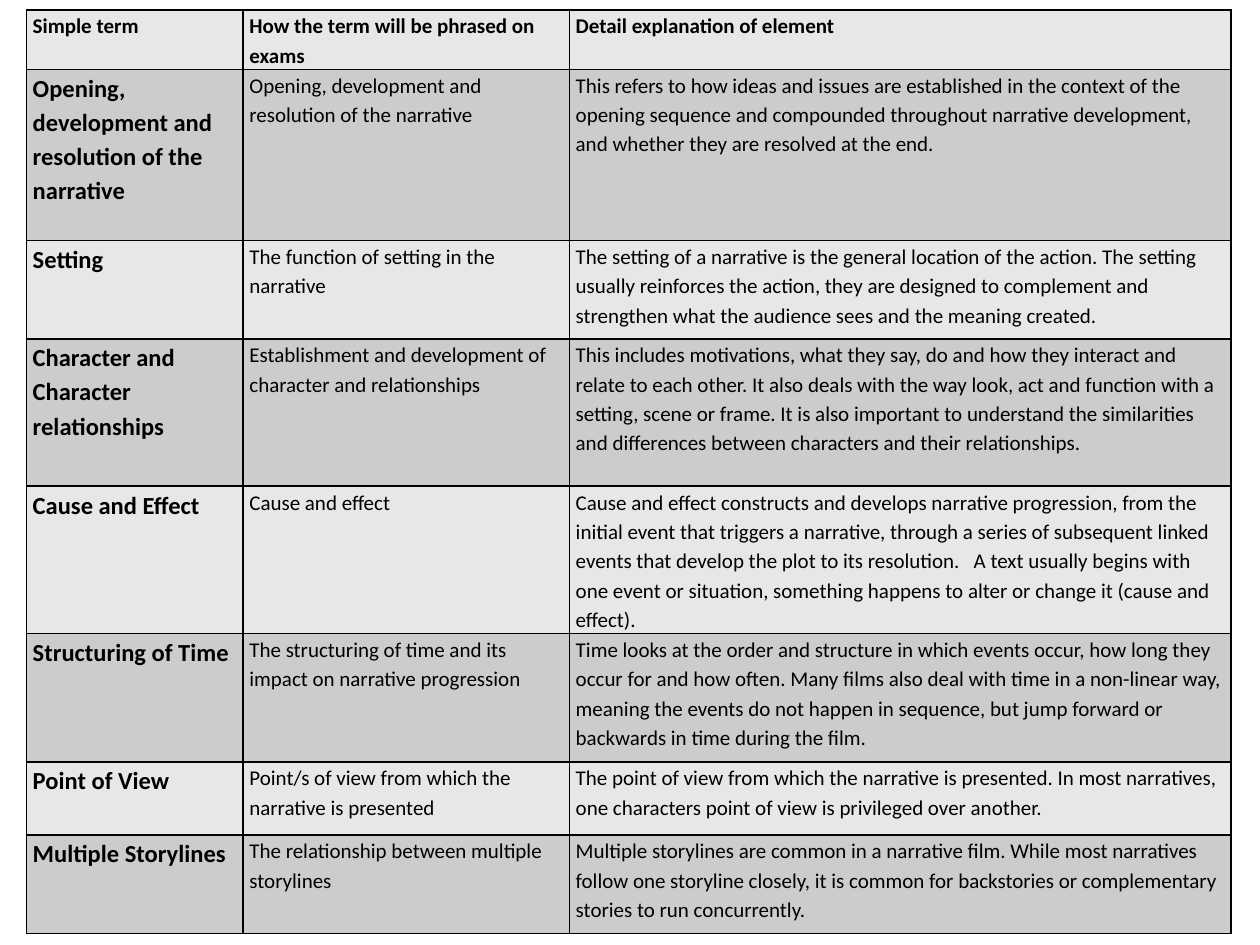
"""Build a one-slide table of the narrative elements used in film exams."""
from typing import NamedTuple

from lxml.etree import SubElement
from pptx import Presentation
from pptx.dml.color import RGBColor
from pptx.oxml.ns import qn
from pptx.util import Inches, Pt

FONT = "Calibri"
BLACK = RGBColor(0x00, 0x00, 0x00)
LIGHT_GREY = RGBColor(0xE7, 0xE7, 0xE7)
DARK_GREY = RGBColor(0xCC, 0xCC, 0xCC)
COLUMN_WIDTHS = (1.72, 2.59, 5.25)


class Element(NamedTuple):
    """One table row: its height in inches and its three texts."""

    height: float
    term: str
    exam_phrase: str
    explanation: str


ELEMENTS = (
    Element(0.47, "Simple term", "How the term will be phrased on exams",
            "Detail explanation of element"),
    Element(1.36, "Opening, development and resolution of the narrative",
            "Opening, development and resolution of the narrative",
            "This refers to how ideas and issues are established in the context of the "
            "opening sequence and compounded throughout narrative development, and "
            "whether they are resolved at the end."),
    Element(0.78, "Setting", "The function of setting in the narrative",
            "The setting of a narrative is the general location of the action. The "
            "setting usually reinforces the action, they are designed to complement and "
            "strengthen what the audience sees and the meaning created."),
    Element(1.17, "Character and Character relationships",
            "Establishment and development of character and relationships",
            "This includes motivations, what they say, do and how they interact and "
            "relate to each other. It also deals with the way look, act and function "
            "with a setting, scene or frame. It is also important to understand the "
            "similarities and differences between characters and their relationships."),
    Element(1.17, "Cause and Effect", "Cause and effect",
            "Cause and effect constructs and develops narrative progression, from the "
            "initial event that triggers a narrative, through a series of subsequent "
            "linked events that develop the plot to its resolution.   A text usually "
            "begins with one event or situation, something happens to alter or change "
            "it (cause and effect)."),
    Element(1.02, "Structuring of Time",
            "The structuring of time and its impact on narrative progression",
            "Time looks at the order and structure in which events occur, how long they "
            "occur for and how often. Many films also deal with time in a non-linear "
            "way, meaning the events do not happen in sequence, but jump forward or "
            "backwards in time during the film."),
    Element(0.58, "Point of View", "Point/s of view from which the narrative is presented",
            "The point of view from which the narrative is presented. In most "
            "narratives, one characters point of view is privileged over another."),
    Element(0.78, "Multiple Storylines", "The relationship between multiple storylines",
            "Multiple storylines are common in a narrative film. While most narratives "
            "follow one storyline closely, it is common for backstories or "
            "complementary stories to run concurrently."),
)


def add_borders(cell) -> None:
    """Draw a thin black line on all four sides of a cell."""
    properties = cell._tc.get_or_add_tcPr()
    for side in ("a:lnL", "a:lnR", "a:lnT", "a:lnB"):
        line = SubElement(properties, qn(side), w=str(Pt(1)))
        fill = SubElement(line, qn("a:solidFill"))
        SubElement(fill, qn("a:srgbClr"), val=str(BLACK))


def format_cell(cell, text: str, size: int, bold: bool, color: RGBColor) -> None:
    """Write and style one cell."""
    add_borders(cell)
    cell.fill.solid()
    cell.fill.fore_color.rgb = color
    cell.margin_left = cell.margin_right = Inches(0.05)
    cell.margin_top = cell.margin_bottom = 0
    cell.text_frame.text = text
    paragraph = cell.text_frame.paragraphs[0]
    paragraph.line_spacing = 1.15
    font = paragraph.runs[0].font
    font.name = FONT
    font.size = Pt(size)
    font.bold = bold
    font.color.rgb = BLACK


def add_element_table(slide, elements: tuple[Element, ...]) -> None:
    """Add the table with alternating row colours."""
    total_height = sum(element.height for element in elements)
    table = slide.shapes.add_table(
        len(elements), len(COLUMN_WIDTHS), Inches(0.21), Inches(0.08),
        Inches(sum(COLUMN_WIDTHS)), Inches(total_height)).table
    for column, width in zip(table.columns, COLUMN_WIDTHS):
        column.width = Inches(width)
    for row_index, (row, element) in enumerate(zip(table.rows, elements)):
        row.height = Inches(element.height)
        is_header = row_index == 0
        color = DARK_GREY if row_index % 2 else LIGHT_GREY
        for column_index, (cell, text) in enumerate(zip(row.cells, element[1:])):
            is_term = column_index == 0
            size = 14 if is_term and not is_header else 12
            format_cell(cell, text, size, is_header or is_term, color)


def main() -> None:
    """Create and save the presentation."""
    presentation = Presentation()
    presentation.slide_width = Inches(10)
    presentation.slide_height = Inches(7.5)
    slide = presentation.slides.add_slide(presentation.slide_layouts[6])
    add_element_table(slide, ELEMENTS)
    presentation.save("out.pptx")


if __name__ == "__main__":
    main()
